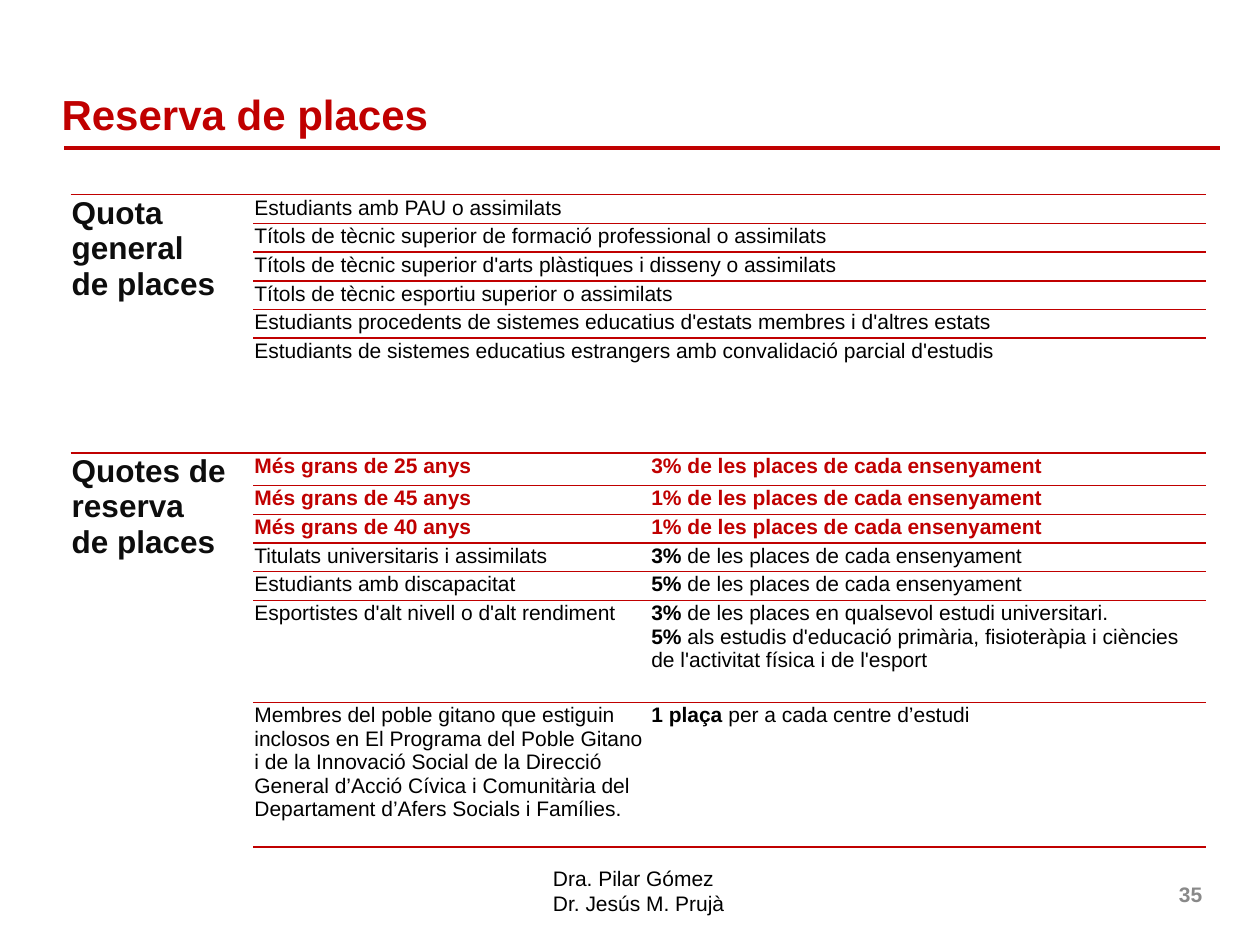
from pptx import Presentation
from pptx.dml.color import RGBColor
from pptx.enum import shapes, text
from pptx.oxml import parse_xml
from pptx.oxml.ns import nsdecls
from pptx.util import Pt

RED, BLACK, DARK, GREY = "C00000", "000000", "0D0D0D", "898989"

TITLE = "Reserva de places"
AUTHORS = ["Dra. Pilar Gómez", "Dr. Jesús M. Prujà"]
PAGE = "35"

GENERAL_HEAD = ["Quota", "general", "de places"]
GENERAL = [
    "Estudiants amb PAU o assimilats",
    "Títols de tècnic superior de formació professional o assimilats",
    "Títols de tècnic superior d'arts plàstiques i disseny o assimilats",
    "Títols de tècnic esportiu superior o assimilats",
    "Estudiants procedents de sistemes educatius d'estats membres i d'altres estats",
    "Estudiants de sistemes educatius estrangers amb convalidació parcial d'estudis",
]

RESERVE_HEAD = ["Quotes de", "reserva", "de places"]
EACH = "de les places de cada ensenyament"
# Group, then its quota as (bold share, rest) lines
AGE_GROUPS = [
    ("Més grans de 25 anys", [("3% ", EACH)]),
    ("Més grans de 45 anys", [("1% ", EACH)]),
    ("Més grans de 40 anys", [("1% ", EACH)]),
]
OTHER_GROUPS = [
    ("Titulats universitaris i assimilats", [("3% ", EACH)]),
    ("Estudiants amb discapacitat", [("5% ", EACH)]),
    ("Esportistes d'alt nivell o d'alt rendiment", [
        ("3% ", "de les places en qualsevol estudi universitari."),
        ("5% ", "als estudis d'educació primària, fisioteràpia i ciències "
                "de l'activitat física i de l'esport")]),
    ("Membres del poble gitano que estiguin inclosos en El Programa del Poble "
     "Gitano i de la Innovació Social de la Direcció General d’Acció Cívica i "
     "Comunitària del Departament d’Afers Socials i Famílies.",
     [("1 plaça ", "per a cada centre d’estudi")]),
]

COLUMNS = [104.4, 226.8, 317.5]
ROW = 16.4
HEIGHTS = [ROW] * 5 + [60.8, 18.8] + [ROW] * 4 + [58.3, 82.6]


def rgb(color):
    return RGBColor.from_string(color)


def write(tf, lines, size, color, bold=False, align=None):
    """Write one paragraph per line; a (bold, rest) line gets two runs."""
    for i, line in enumerate(lines):
        p = tf.paragraphs[0] if i == 0 else tf.add_paragraph()
        p.alignment = align
        p.font.name, p.font.size, p.font.bold = "Arial", Pt(size), bold
        p.font.color.rgb = rgb(color)
        parts = [line] if isinstance(line, str) else line
        for j, part in enumerate(parts):
            r = p.add_run()
            r.text = part
            if len(parts) > 1 and not bold:
                r.font.bold = j == 0


def add_text(slide, box, lines, size, color, bold=False, align=None,
             anchor=text.MSO_ANCHOR.MIDDLE):
    tf = slide.shapes.add_textbox(*map(Pt, box)).text_frame
    tf.word_wrap = True
    tf.vertical_anchor = anchor
    write(tf, lines, size, color, bold, align)


def set_borders(cell, top, bottom):
    tcPr = cell._tc.get_or_add_tcPr()
    for side, shown in (("L", False), ("R", False), ("T", top), ("B", bottom)):
        fill = (f'<a:solidFill><a:srgbClr val="{RED}"/></a:solidFill>'
                if shown else "<a:noFill/>")
        tcPr.append(parse_xml(
            f'<a:ln{side} {nsdecls("a")} w="{Pt(1)}">{fill}</a:ln{side}>'))


def add_quota_table(slide):
    last, split = len(HEIGHTS) - 1, len(GENERAL)
    frame = slide.shapes.add_table(len(HEIGHTS), len(COLUMNS), Pt(40.3), Pt(111.3),
                                   Pt(sum(COLUMNS)), Pt(sum(HEIGHTS)))
    table = frame.table
    table.first_row = table.horz_banding = False
    for column, width in zip(table.columns, COLUMNS):
        column.width = Pt(width)
    for row, height in zip(table.rows, HEIGHTS):
        row.height = Pt(height)

    for r in range(last + 1):
        for c in range(len(COLUMNS)):
            cell = table.cell(r, c)
            cell.margin_left = cell.margin_right = cell.margin_top = Pt(0.7)
            cell.margin_bottom = 0
            set_borders(cell, c > 0 or r in (0, split),
                        c > 0 or r in (split - 1, last))
            cell.fill.background()

    for first, end, head in ((0, split - 1, GENERAL_HEAD), (split, last, RESERVE_HEAD)):
        table.cell(first, 0).merge(table.cell(end, 0))
        write(table.cell(first, 0).text_frame, head, 18, DARK, bold=True)
    for r, line in enumerate(GENERAL):
        table.cell(r, 1).merge(table.cell(r, 2))
        write(table.cell(r, 1).text_frame, [line], 12, BLACK)
    for r, (group, quota) in enumerate(AGE_GROUPS + OTHER_GROUPS, split):
        by_age = r < split + len(AGE_GROUPS)
        color = RED if by_age else BLACK
        write(table.cell(r, 1).text_frame, [group], 12, color, by_age)
        write(table.cell(r, 2).text_frame, quota, 12, color, by_age)


def main():
    prs = Presentation()
    prs.slide_width, prs.slide_height = Pt(720), Pt(540)
    slide = prs.slides.add_slide(prs.slide_layouts[6])

    rule = slide.shapes.add_connector(shapes.MSO_CONNECTOR.STRAIGHT,
                                      Pt(36.7), Pt(84.5), Pt(697), Pt(84.5))
    rule.line.color.rgb = rgb(RED)
    rule.line.width = Pt(2.25)
    rule._element.spPr.append(parse_xml(f'<a:effectLst {nsdecls("a")}/>'))

    add_text(slide, (308.9, 491, 113, 36.7), AUTHORS, 12, BLACK,
             anchor=text.MSO_ANCHOR.TOP)
    add_text(slide, (28.1, 45.4, 674.6, 39.6), [TITLE], 24, RED, bold=True)
    add_text(slide, (526.3, 496.8, 167.8, 28.8), [PAGE], 12, GREY, bold=True,
             align=text.PP_ALIGN.RIGHT)
    add_quota_table(slide)
    prs.save("out.pptx")


if __name__ == "__main__":
    main()
